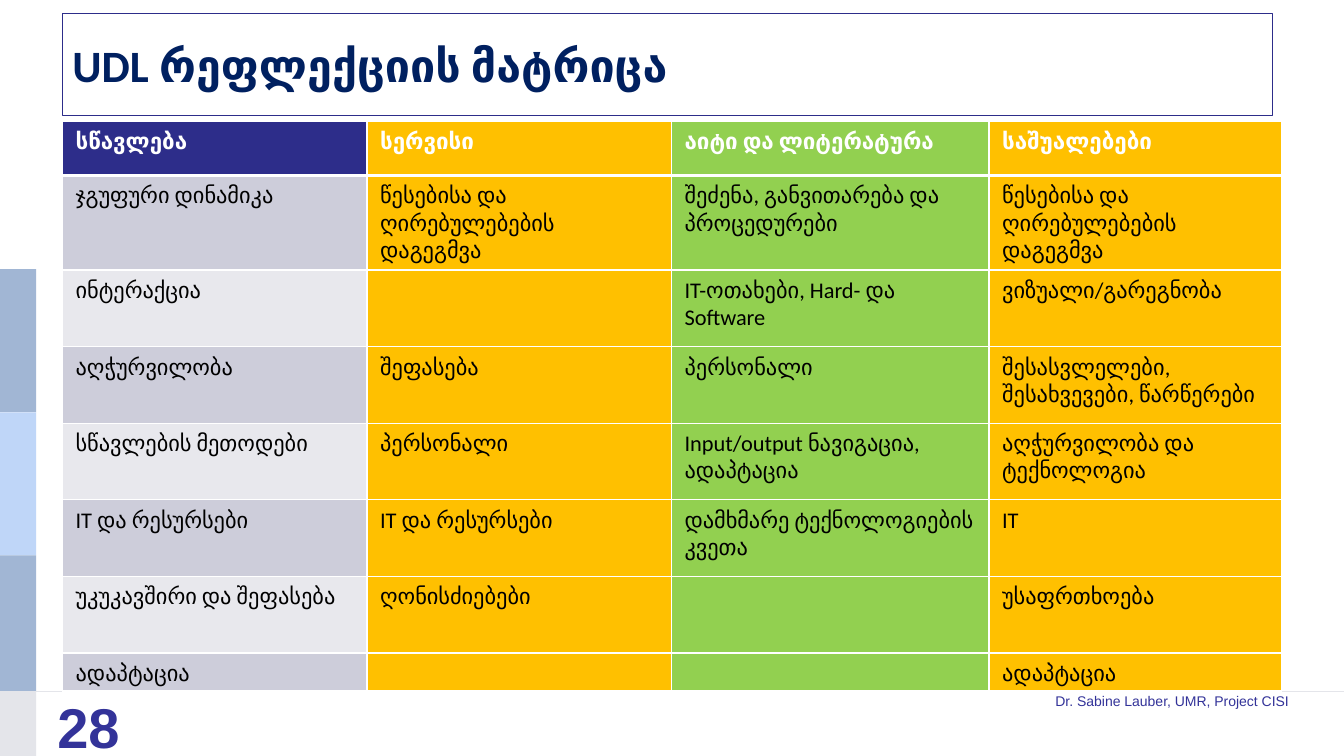
from lxml import etree
from pptx import Presentation
from pptx.dml.color import RGBColor
from pptx.enum import shapes, text
from pptx.oxml import ns
from pptx.util import Inches, Pt

COLORS = {
    "navy": "002060", "indigo": "2D2D8A", "violet": "333399",
    "amber": "FFC000", "green": "92D050", "white": "FFFFFF", "black": "000000",
    "band_dark": "CDCDDA", "band_light": "E8E8ED",
    "steel": "A1B6D4", "sky": "BFD6F8", "mist": "E4E5EA",
}
TITLE = "UDL რეფლექციის მატრიცა"
CREDIT = "Dr. Sabine Lauber, UMR, Project CISI"
PAGE_NUMBER = "28"
HEADER = ("სწავლება", "სერვისი", "აიტი და ლიტერატურა", "საშუალებები")
BODY = [
    ("ჯგუფური დინამიკა", "წესებისა და ღირებულებების დაგეგმვა",
     "შეძენა, განვითარება და პროცედურები", "წესებისა და ღირებულებების დაგეგმვა"),
    ("ინტერაქცია", "", "IT-ოთახები, Hard- და Software", "ვიზუალი/გარეგნობა"),
    ("აღჭურვილობა", "შეფასება", "პერსონალი", "შესასვლელები, შესახვევები, წარწერები"),
    ("სწავლების მეთოდები", "პერსონალი", "Input/output ნავიგაცია, ადაპტაცია",
     "აღჭურვილობა და ტექნოლოგია"),
    ("IT და რესურსები", "IT და რესურსები", "დამხმარე ტექნოლოგიების კვეთა", "IT"),
    ("უკუკავშირი და შეფასება", "ღონისძიებები", "", "უსაფრთხოება"),
    ("ადაპტაცია", "", "", "ადაპტაცია"),
]
COLUMN_WIDTHS = (3.02, 3.02, 3.15, 2.9)
COLUMN_COLORS = ("indigo", "amber", "green", "amber")
ROW_HEIGHTS = (0.54, *[0.76] * 6, 0.32)
SIDE_STRIPS = [  # top, bottom, color
    (2.67, 4.09, "steel"), (4.09, 5.51, "sky"),
    (5.51, 6.86, "steel"), (6.86, 7.5, "mist"),
]
FOOTER_LINE_Y = 6.86


def rgb(name):
    return RGBColor.from_string(COLORS[name])


def write(frame, words, size, color, font="Calibri", bold=False,
          align=text.PP_ALIGN.LEFT, anchor=text.MSO_ANCHOR.TOP):
    """Write one formatted paragraph; empty words still set the line's size."""
    frame.word_wrap = True
    frame.vertical_anchor = anchor
    paragraph = frame.paragraphs[0]
    paragraph.alignment = align
    if not words:
        etree.SubElement(paragraph._p, ns.qn("a:endParaRPr"), sz=str(size * 100))
        return
    run = paragraph.add_run()
    run.text = words
    run.font.name, run.font.size, run.font.bold = font, Pt(size), bold
    run.font.color.rgb = rgb(color)


def add_box(slide, left, top, width, height, fill=None, outline=None):
    box = slide.shapes.add_shape(shapes.MSO_SHAPE.RECTANGLE, Inches(left),
                                 Inches(top), Inches(width), Inches(height))
    box.shadow.inherit = False
    if fill:
        box.fill.solid()
        box.fill.fore_color.rgb = rgb(fill)
    else:
        box.fill.background()
    if outline:
        box.line.color.rgb = rgb(outline)
        box.line.width = Pt(0.75)
    else:
        box.line.fill.background()
    return box


def add_label(slide, left, width, words, **style):
    label = slide.shapes.add_textbox(Inches(left), Inches(6.82), Inches(width), Inches(0.52))
    write(label.text_frame, words, color="violet", font="Arial", **style)


def set_borders(cell, top, bottom):
    """Give the cell white borders: 1 pt at the sides, given points above and below."""
    properties = cell._tc.get_or_add_tcPr()
    for side, points in (("L", 1), ("R", 1), ("T", top), ("B", bottom)):
        line = etree.SubElement(properties, ns.qn(f"a:ln{side}"), w=str(Pt(points)))
        fill = etree.SubElement(line, ns.qn("a:solidFill"))
        etree.SubElement(fill, ns.qn("a:srgbClr"), val=COLORS["white"])


def fill_cell(cell, words, row, column):
    set_borders(cell, top=3 if row == 1 else 1, bottom=3 if row == 0 else 1)
    color = COLUMN_COLORS[column]
    if row and column == 0:
        color = "band_dark" if row % 2 else "band_light"
    cell.fill.solid()
    cell.fill.fore_color.rgb = rgb(color)
    cell.margin_left = cell.margin_right = Inches(0.13)
    cell.margin_top = Inches(0.07)
    # The last row is tight, so that it ends on the footer line.
    cell.margin_bottom = Inches(0.04 if row == len(BODY) else 0.07)
    write(cell.text_frame, words, 16, "black" if row else "white", bold=row == 0)


def add_matrix(slide):
    rows = [HEADER, *BODY]
    matrix = slide.shapes.add_table(
        len(rows), len(HEADER), Inches(0.62), Inches(1.2),
        Inches(sum(COLUMN_WIDTHS)), Inches(sum(ROW_HEIGHTS))).table
    for column, width in zip(matrix.columns, COLUMN_WIDTHS):
        column.width = Inches(width)
    for row, height in zip(matrix.rows, ROW_HEIGHTS):
        row.height = Inches(height)
    for r, row in enumerate(rows):
        for c, words in enumerate(row):
            fill_cell(matrix.cell(r, c), words, r, c)


def main():
    deck = Presentation()
    deck.slide_width, deck.slide_height = Inches(13.33), Inches(7.5)
    slide = deck.slides.add_slide(deck.slide_layouts[6])

    for top, bottom, color in SIDE_STRIPS:
        add_box(slide, 0, top, 0.36, bottom - top, fill=color)
    rule = slide.shapes.add_connector(shapes.MSO_CONNECTOR.STRAIGHT, 0, Inches(FOOTER_LINE_Y),
                                      deck.slide_width, Inches(FOOTER_LINE_Y))
    rule.line.color.rgb = rgb("mist")
    rule.line.width = Pt(0.5)
    etree.SubElement(rule._element.spPr, ns.qn("a:effectLst"))

    title = add_box(slide, 0.62, 0.13, 12, 1.02, outline="indigo")
    write(title.text_frame, TITLE, 32, "navy", bold=True, anchor=text.MSO_ANCHOR.MIDDLE)
    add_label(slide, 8.66, 4.22, CREDIT, size=10, align=text.PP_ALIGN.RIGHT)
    add_label(slide, 0.47, 3.11, PAGE_NUMBER, size=40, bold=True)
    add_matrix(slide)
    deck.save("out.pptx")


if __name__ == "__main__":
    main()
